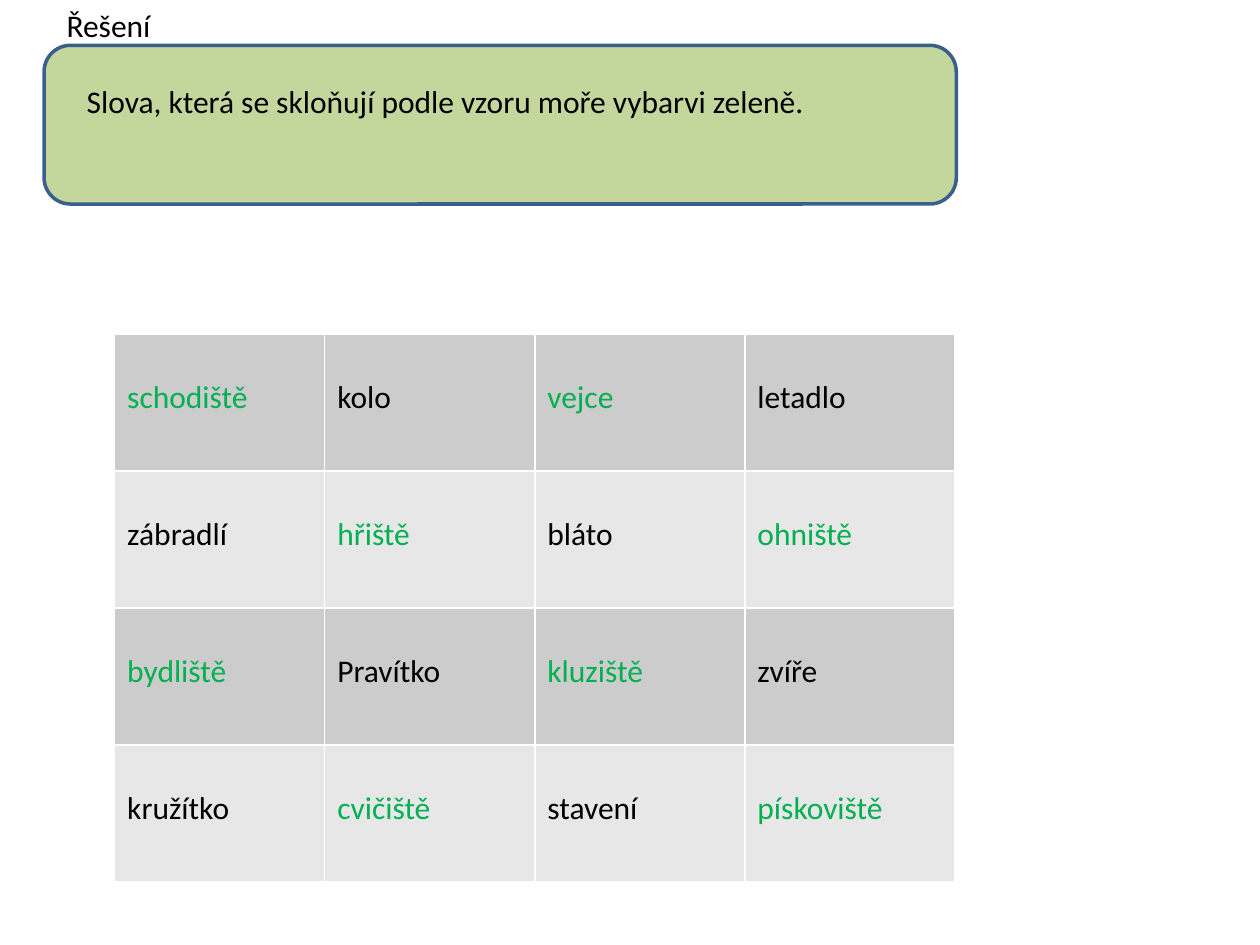
from lxml import etree
from pptx import Presentation
from pptx.dml.color import RGBColor
from pptx.enum import shapes
from pptx.oxml import ns
from pptx.util import Inches, Pt

BLACK, GREEN, WHITE = "000000", "00B050", "FFFFFF"
ROW_FILLS = ["CCCCCC", "E7E7E7"]
WORDS = [
    ["schodiště", "kolo", "vejce", "letadlo"],
    ["zábradlí", "hřiště", "bláto", "ohniště"],
    ["bydliště", "Pravítko", "kluziště", "zvíře"],
    ["kružítko", "cvičiště", "stavení", "pískoviště"],
]


def rgb(color):
    return RGBColor.from_string(color)


def write(tf, text, color=BLACK, size=18, font="Calibri"):
    tf.word_wrap = True
    r = tf.paragraphs[0].add_run()
    r.text = text
    r.font.name, r.font.size = font, Pt(size)
    r.font.color.rgb = rgb(color)


prs = Presentation()
prs.slide_width, prs.slide_height = Inches(10), Inches(7.5)
s = prs.slides.add_slide(prs.slide_layouts[6])

panel = s.shapes.add_shape(shapes.MSO_SHAPE.ROUNDED_RECTANGLE,
                           Inches(0.35), Inches(0.36), Inches(7.24), Inches(1.26))
panel.shadow.inherit = False
panel.fill.solid()
panel.fill.fore_color.rgb = rgb("C3D69B")
panel.line.color.rgb = rgb("3A5F8C")
panel.line.width = Pt(2)

task = s.shapes.add_textbox(Inches(0.59), Inches(0.6), Inches(6.46), Inches(0.4))
write(task.text_frame, "Slova, která se skloňují podle vzoru moře vybarvi zeleně.")

table = s.shapes.add_table(4, 4, Inches(0.91), Inches(2.65),
                           Inches(6.67), Inches(4.35)).table
for i, words in enumerate(WORDS):
    for j, word in enumerate(words):
        cell = table.cell(i, j)
        cell.margin_top = Inches(0.35)
        # Neuter nouns in -iště and "vejce" follow the pattern "moře"
        solved = word.endswith("iště") or word == "vejce"
        write(cell.text_frame, word, color=GREEN if solved else BLACK)
        tcPr = cell._tc.get_or_add_tcPr()
        for side in ("a:lnL", "a:lnR", "a:lnT", "a:lnB"):
            ln = etree.SubElement(tcPr, ns.qn(side), w=str(Pt(1)))
            fill = etree.SubElement(ln, ns.qn("a:solidFill"))
            etree.SubElement(fill, ns.qn("a:srgbClr"), val=WHITE)
        cell.fill.solid()
        cell.fill.fore_color.rgb = rgb(ROW_FILLS[i % 2])

heading = s.shapes.add_textbox(Inches(0.43), Inches(0), Inches(1.73), Inches(0.71))
write(heading.text_frame, "Řešení")

prs.save("out.pptx")
